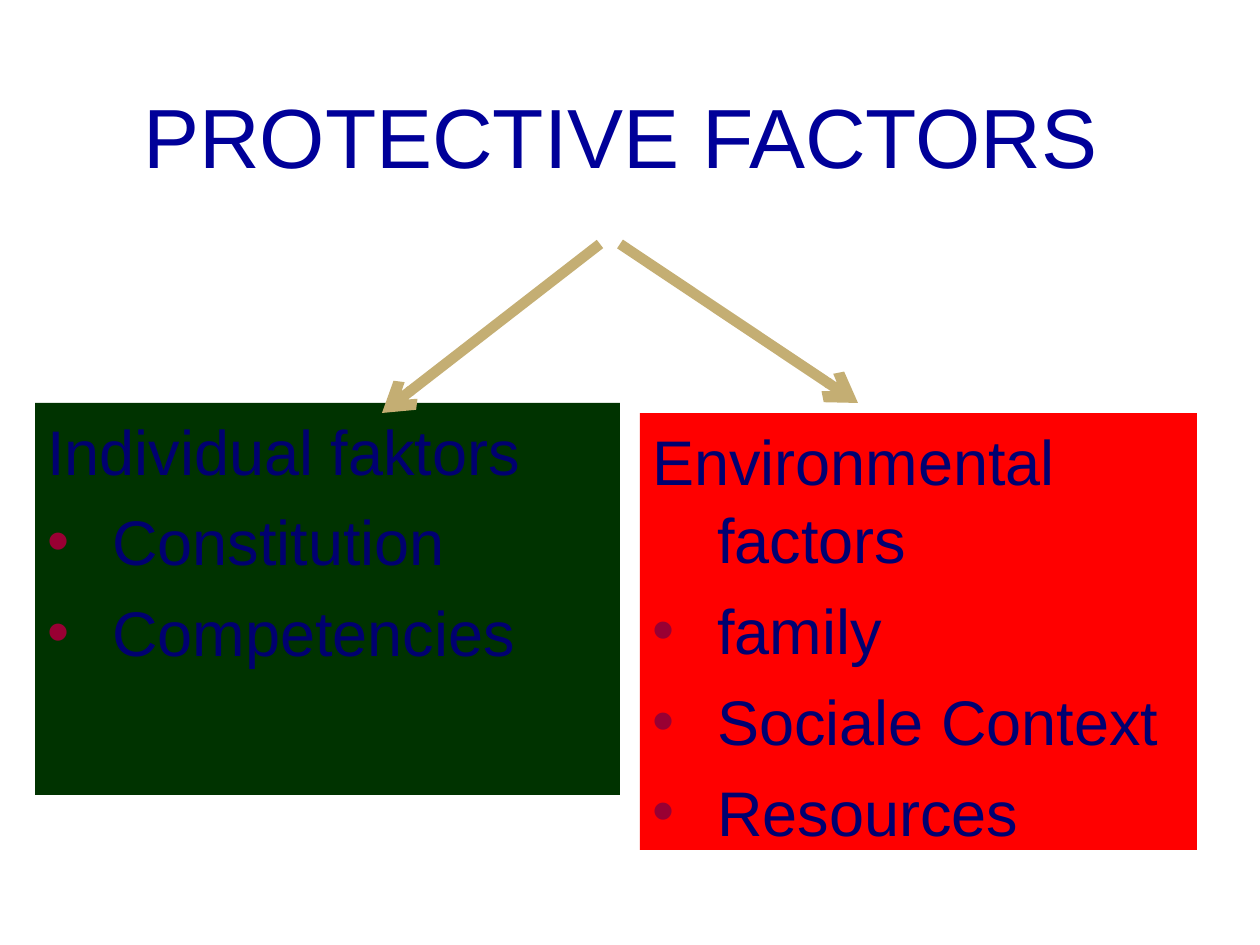
"""Build the slide on protective factors: a title with arrows to two groups."""
from dataclasses import dataclass

from lxml import etree
from pptx import Presentation
from pptx import util as u
from pptx.dml.color import RGBColor
from pptx.enum import shapes, text
from pptx.oxml.ns import qn


@dataclass(frozen=True)
class Theme:
    font: str = "Arial"
    title_size: int = 48
    body_size: int = 36
    title: str = "000099"
    body: str = "000070"
    bullet: str = "990033"
    arrow: str = "C4AE73"


THEME = Theme()
HEADLINE = "PROTECTIVE FACTORS\v"
HEADLINE_BOX = (54, 106, 1134, 158)
GROUPS = [
    {"heading": "Individual faktors",
     "factors": ["Constitution", "Competencies"],
     "box": (35, 403, 585, 392), "fill": "003300",
     "arrow": (600, 244, 382, 413)},
    {"heading": "Environmental factors",
     "factors": ["family", "Sociale Context", "Resources"],
     "box": (640, 413, 557, 437), "fill": "FF0000",
     "arrow": (620, 244, 858, 403)},
]
INDENT = 65


def px(value):
    return u.Emu(round(value * u.Inches(1) / 126))


def place(lengths):
    return [px(length) for length in lengths]


def color(value):
    return RGBColor.from_string(value)


def style(paragraph, size, value):
    paragraph.font.name = THEME.font
    paragraph.font.size = u.Pt(size)
    paragraph.font.color.rgb = color(value)


def add_headline(slide):
    headline = slide.shapes.title
    headline.left, headline.top, headline.width, headline.height = place(HEADLINE_BOX)
    frame = headline.text_frame
    frame.text = HEADLINE
    frame.auto_size = text.MSO_AUTO_SIZE.NONE
    frame.vertical_anchor = text.MSO_ANCHOR.MIDDLE
    frame.paragraphs[0].alignment = text.PP_ALIGN.CENTER
    style(frame.paragraphs[0], THEME.title_size, THEME.title)


def add_bullet(properties):
    bullet_color = etree.SubElement(properties, qn("a:buClr"))
    etree.SubElement(bullet_color, qn("a:srgbClr"), val=THEME.bullet)
    etree.SubElement(properties, qn("a:buFont"), typeface=THEME.font)
    etree.SubElement(properties, qn("a:buChar"), char="•")


def add_group(slide, group):
    panel = slide.shapes.add_shape(shapes.MSO_SHAPE.RECTANGLE, *place(group["box"]))
    panel.shadow.inherit = False
    panel.fill.solid()
    panel.fill.fore_color.rgb = color(group["fill"])
    panel.line.fill.background()
    frame = panel.text_frame
    frame.word_wrap = True
    frame.vertical_anchor = text.MSO_ANCHOR.TOP
    for index, wording in enumerate([group["heading"], *group["factors"]]):
        entry = frame.add_paragraph() if index else frame.paragraphs[0]
        entry.text = wording
        entry.alignment = text.PP_ALIGN.LEFT
        entry.line_spacing = 1.04
        properties = entry._p.get_or_add_pPr()
        properties.set("marL", str(px(INDENT)))
        properties.set("indent", str(-px(INDENT)))
        if index:
            entry.space_before = u.Pt(7)
            add_bullet(properties)
        style(entry, THEME.body_size, THEME.body)


def add_arrow(slide, ends):
    arrow = slide.shapes.add_connector(shapes.MSO_CONNECTOR.STRAIGHT, *place(ends))
    arrow.line.color.rgb = color(THEME.arrow)
    arrow.line.width = u.Pt(6)
    etree.SubElement(arrow.line._get_or_add_ln(), qn("a:tailEnd"), type="arrow")
    etree.SubElement(arrow._element.spPr, qn("a:effectLst"))


def main():
    deck = Presentation()
    deck.slide_width, deck.slide_height = place((1260, 945))
    slide = deck.slides.add_slide(deck.slide_layouts[5])
    add_headline(slide)
    for group in GROUPS:
        add_group(slide, group)
    for group in GROUPS:
        add_arrow(slide, group["arrow"])
    deck.save("out.pptx")


if __name__ == "__main__":
    main()
